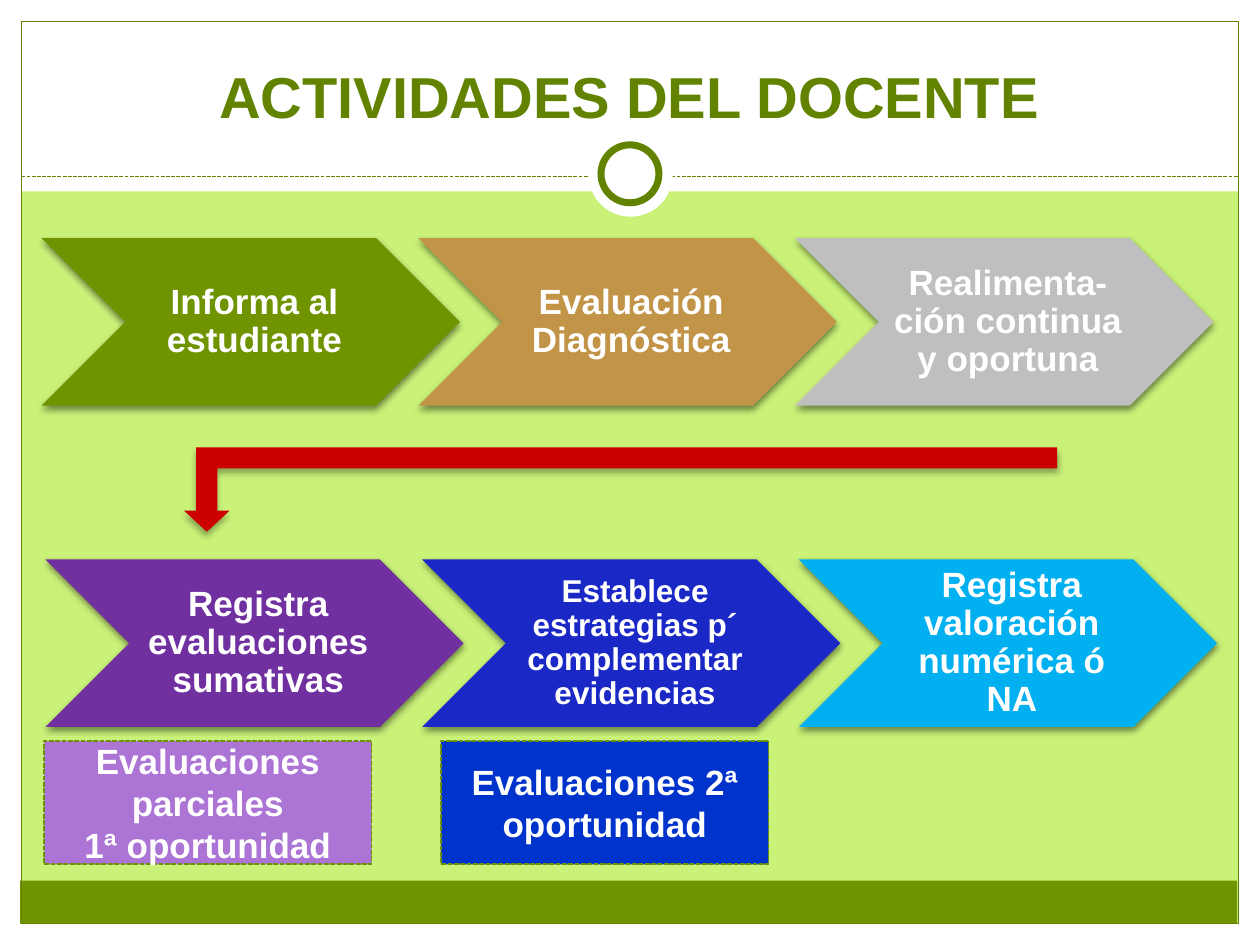
import pptx
import pptx.dml.color
import pptx.enum.dml
import pptx.enum.shapes
import pptx.enum.text
import pptx.oxml
import pptx.oxml.ns
import pptx.util

Inches = pptx.util.Inches
Pt = pptx.util.Pt
RGBColor = pptx.dml.color.RGBColor
Shape = pptx.enum.shapes.MSO_SHAPE
Anchor = pptx.enum.text.MSO_ANCHOR
Align = pptx.enum.text.PP_ALIGN

WHITE = RGBColor(0xFF, 0xFF, 0xFF)
LIME = RGBColor(0xCA, 0xF2, 0x78)
GREEN = RGBColor(0x6F, 0x94, 0x00)
DARK_GREEN = RGBColor(0x62, 0x83, 0x00)
BORDER_GREEN = RGBColor(0x6D, 0x92, 0x00)
TAN = RGBColor(0xC2, 0x94, 0x47)
GRAY = RGBColor(0xBF, 0xBF, 0xBF)
PURPLE = RGBColor(0x70, 0x30, 0xA0)
LILAC = RGBColor(0xAB, 0x74, 0xD5)
INDIGO = RGBColor(0x1A, 0x28, 0xC6)
BLUE = RGBColor(0x00, 0x33, 0xCC)
SKY = RGBColor(0x00, 0xB0, 0xF0)
RED = RGBColor(0xCC, 0x00, 0x00)


class SlideBuilder:
    font = "Arial"
    dash = pptx.enum.dml.MSO_LINE.SQUARE_DOT

    def __init__(self, page):
        self.page = page

    def background(self, color):
        self.page.background.fill.solid()
        self.page.background.fill.fore_color.rgb = color

    def add_text(self, shape, lines, size, color=WHITE, anchor=Anchor.MIDDLE, spacing=None):
        frame = shape.text_frame
        frame.word_wrap = True
        frame.vertical_anchor = anchor
        for number, line in enumerate(lines):
            para = frame.add_paragraph() if number else frame.paragraphs[0]
            para.alignment = Align.CENTER
            if spacing:
                para.line_spacing = spacing
            span = para.add_run()
            span.text = line
            span.font.name = self.font
            span.font.size = Pt(size)
            span.font.bold = True
            span.font.color.rgb = color

    def title(self, text, left, top, width, height):
        title = self.page.shapes.title
        title.left, title.top = Inches(left), Inches(top)
        title.width, title.height = Inches(width), Inches(height)
        self.add_text(title, [text], 33, DARK_GREEN, Anchor.BOTTOM)
        # Bring the title in front of the white bands
        title.element.getparent().append(title.element)

    def shape(self, kind, left, top, width, height, fill=None, line=None, weight=0.75, dashed=False):
        shape = self.page.shapes.add_shape(
            kind, Inches(left), Inches(top), Inches(width), Inches(height))
        shape.shadow.inherit = False
        if fill is None:
            shape.fill.background()
        else:
            shape.fill.solid()
            shape.fill.fore_color.rgb = fill
        if line is None:
            shape.line.fill.background()
        else:
            shape.line.color.rgb = line
            shape.line.width = Pt(weight)
            if dashed:
                shape.line.dash_style = self.dash
        return shape

    def dashed_line(self, left, right, top):
        line = self.page.shapes.add_connector(
            pptx.enum.shapes.MSO_CONNECTOR.STRAIGHT,
            Inches(left), Inches(top), Inches(right), Inches(top))
        line.line.color.rgb = DARK_GREEN
        line.line.width = Pt(0.75)
        line.line.dash_style = self.dash
        self.effects(line)

    def effects(self, shape):
        effects = pptx.oxml.parse_xml(
            f'<a:effectLst {pptx.oxml.ns.nsdecls("a")}/>')
        shape.element.spPr.append(effects)
        return effects

    def drop_shadow(self, shape, opacity, blur, distance):
        for old in shape.element.spPr.findall(pptx.oxml.ns.qn("a:effectLst")):
            shape.element.spPr.remove(old)
        self.effects(shape).append(pptx.oxml.parse_xml(
            f'<a:outerShdw {pptx.oxml.ns.nsdecls("a")} blurRad="{Pt(blur)}" '
            f'dist="{Pt(distance)}" dir="5400000" rotWithShape="0">'
            f'<a:srgbClr val="000000"><a:alpha val="{opacity * 1000}"/></a:srgbClr>'
            '</a:outerShdw>'))

    def chevron(self, left, top, fill, text, size):
        step = self.shape(Shape.CHEVRON, left, top, 3.32, 1.33, fill)
        self.drop_shadow(step, 45, 4, 2)
        frame = step.text_frame
        frame.margin_left = Inches(0.09)
        frame.margin_top = frame.margin_right = frame.margin_bottom = Inches(0.03)
        self.add_text(step, [text], size, spacing=0.9)

    def return_arrow(self, left, top, width, height):
        arrow = self.shape(Shape.BENT_UP_ARROW, left, top, width, height, RED)
        arrow.rotation = 180
        for number, value in enumerate((0.25, 0.27, 0.25)):
            arrow.adjustments[number] = value
        self.drop_shadow(arrow, 32, 3.5, 2.2)

    def note(self, left, fill, lines):
        box = self.shape(Shape.RECTANGLE, left, 5.88, 2.6, 0.98, fill, BORDER_GREEN, 0.9, True)
        self.add_text(box, lines, 20)


def main():
    deck = pptx.Presentation()
    deck.slide_width, deck.slide_height = Inches(10), Inches(7.5)
    slide = SlideBuilder(deck.slides.add_slide(deck.slide_layouts[5]))
    slide.background(LIME)

    # White margins, header band and green footer
    for band in ((0, 7.33, 10, 0.17), (0, 0, 10, 1.52), (0, 0, 0.17, 7.5), (9.83, 0, 0.17, 7.5)):
        slide.shape(Shape.RECTANGLE, *band, WHITE)
    slide.shape(Shape.RECTANGLE, 0.16, 6.99, 9.66, 0.34, GREEN)
    slide.shape(Shape.RECTANGLE, 0.17, 0.17, 9.66, 7.16, line=DARK_GREEN)

    # Header divider with its ring
    slide.dashed_line(0.17, 9.83, 1.4)
    slide.shape(Shape.OVAL, 4.67, 1.05, 0.67, 0.67, WHITE)
    slide.shape(Shape.OVAL, 4.77, 1.15, 0.46, 0.46, WHITE, DARK_GREEN, 4)
    slide.title("ACTIVIDADES DEL DOCENTE", 0.33, 0.25, 9.33, 0.83)

    # Two rows of process steps
    rows = (
        (0.33, 1.89, (
            (GREEN, "Informa al estudiante", 20),
            (TAN, "Evaluación Diagnóstica", 20),
            (GRAY, "Realimenta-ción continua y oportuna", 20))),
        (0.36, 4.44, (
            (PURPLE, "Registra evaluaciones sumativas", 20),
            (INDIGO, "Establece estrategias p´ complementar evidencias", 18),
            (SKY, "Registra valoración numérica ó NA", 20))),
    )
    for left, top, steps in rows:
        for column, step in enumerate(steps):
            slide.chevron(left + 2.99 * column, top, *step)

    # Arrow from the first row to the second
    slide.return_arrow(1.46, 3.55, 6.93, 0.67)

    # Notes under the second row
    slide.note(0.35, LILAC, ["Evaluaciones parciales", "1ª oportunidad"])
    slide.note(3.5, BLUE, ["Evaluaciones 2ª oportunidad"])

    deck.save("out.pptx")


if __name__ == "__main__":
    main()
